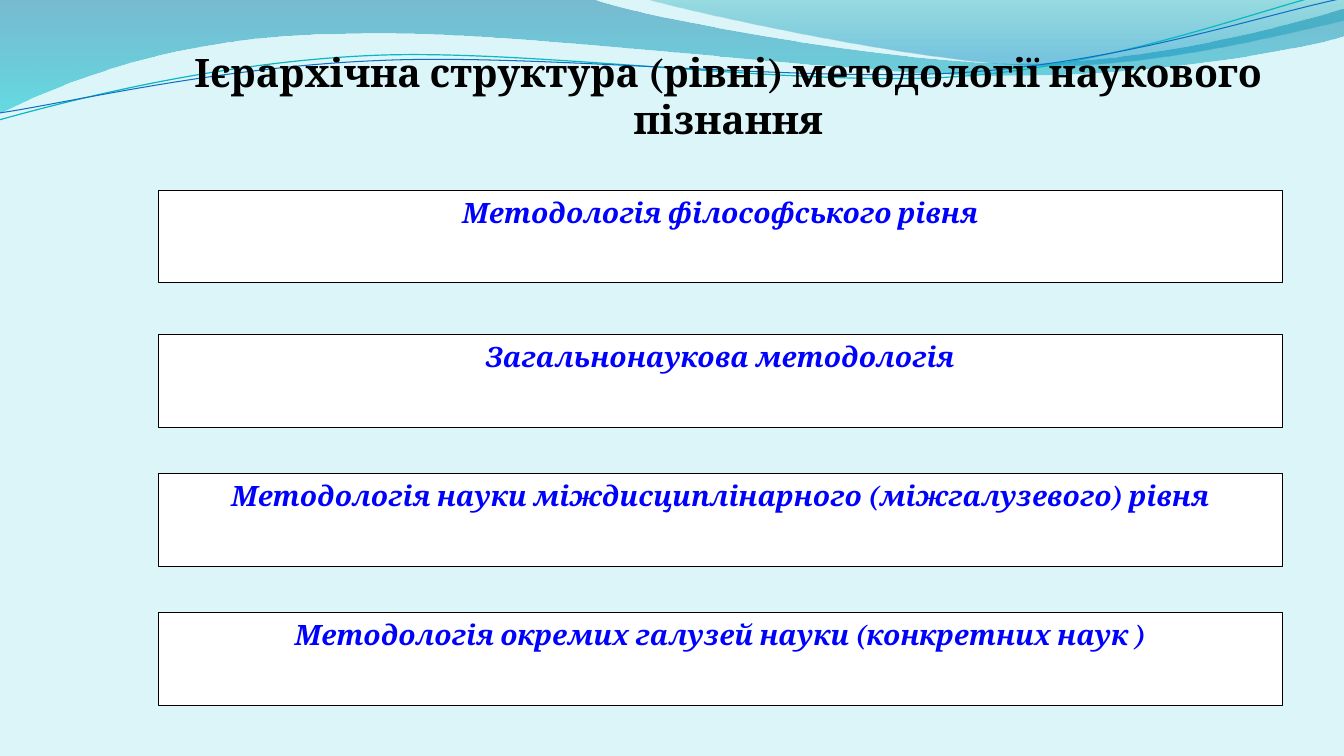
from pptx import Presentation
from pptx.dml.color import RGBColor
from pptx.enum.shapes import MSO_SHAPE
from pptx.enum.text import MSO_ANCHOR, PP_ALIGN
from pptx.oxml.ns import qn
from pptx.util import Cm, Pt
from lxml.etree import SubElement

FONT = "Cambria"
INCH = 2.54

# Wave outlines in inches: a start, then segments of one point (line)
# or three points (Bezier curve).
BAND = ((0, -0.01), [
    [(5.87, -0.01)],
    [(6.34, 0.17), (8.85, 0.63), (10.11, 0.63)],
    [(11.38, 0.63), (12.78, 0.26), (13.33, 0.09)],
    [(13.35, 0.36)],
    [(13.11, 0.44), (11.6, 0.76), (9.94, 0.75)],
    [(8.29, 0.75), (5.09, 0.28), (3.43, 0.34)],
    [(1.72, 0.35), (0.61, 0.83), (-0.01, 1.13)]])
CREST = ((6.39, -0.01), [
    [(6.79, 0.11), (9.09, 0.62), (10.25, 0.65)],
    [(11.41, 0.69), (12.82, 0.32), (13.33, 0.21)],
    [(13.33, 0)]])
TEAL = ((-0.01, 1.19), [
    [(0.64, 1.01), (2.11, 0.62), (3.69, 0.55)],
    [(5.27, 0.48), (7.9, 0.87), (9.5, 0.76)],
    [(11.1, 0.65), (12.52, 0.08), (13.31, -0.1)]])
BLUE = ((0, 1.12), [
    [(0.63, 1.03), (2.18, 0.66), (3.78, 0.6)],
    [(5.37, 0.53), (7.96, 0.82), (9.55, 0.72)],
    [(11.15, 0.62), (12.55, 0.14), (13.34, -0.02)]])

TITLE = "Ієрархічна структура (рівні) методології наукового пізнання"
LEVELS = [
    (0, "Методологія філософського рівня"),
    (3.64, "Загальнонаукова методологія"),
    (7.15, "Методологія науки міждисциплінарного (міжгалузевого) рівня"),
    (10.65, "Методологія окремих галузей науки (конкретних наук )"),
]


def color(text):
    return RGBColor.from_string(text)


def bend(shape, parts):
    """Turn each run of three line points into one Bezier curve."""
    lines = iter(list(shape._element.iter(qn("a:lnTo"))))
    for part in parts:
        group = [next(lines) for _ in part]
        if len(group) == 3:
            curve = group[0]
            curve.tag = qn("a:cubicBezTo")
            for line in group[1:]:
                curve.append(line[0])
                line.getparent().remove(line)


def trace(slide, left, top, wave, close):
    start, parts = wave
    pts = [start] + [pt for part in parts for pt in part]
    spots = [(Cm(left + x * INCH), Cm(top + y * INCH)) for x, y in pts]
    form = slide.shapes.build_freeform(*spots[0], scale=1.0)
    form.add_line_segments(spots[1:], close=close)
    shape = form.convert_to_shape()
    shape.shadow.inherit = False
    bend(shape, parts)
    return shape


def shade(shape, stops):
    """Downward gradient from (place, colour, opacity %) stops."""
    fill = shape.fill
    fill.gradient()
    fill.gradient_angle = 270
    nodes = shape._element.iter(qn("a:gs"))
    for stop, node, (place, tint, alpha) in zip(
            fill.gradient_stops, nodes, stops):
        stop.position = place
        stop.color.rgb = color(tint)
        SubElement(node[0], qn("a:alpha")).set("val", str(alpha * 1000))
    shape.line.fill.background()


def waves(slide, left, top):
    for wave, stops in [
        (BAND, [(0, "0074A1", 45), (1, "00C6CF", 55)]),
        (CREST, [(0, "00A1A9", 30), (0.8, "008BBF", 45)]),
    ]:
        shade(trace(slide, left, top, wave, True), stops)
    for wave, tint, width in [(TEAL, "0AB8BF", 0.85), (BLUE, "0F6FC6", 0.75)]:
        shape = trace(slide, left, top, wave, False)
        shape.fill.background()
        shape.line.color.rgb = color(tint)
        shape.line.width = Pt(width)


def write(shape, text, size, tint, slant=False):
    frame = shape.text_frame
    frame.word_wrap = True
    frame.vertical_anchor = MSO_ANCHOR.TOP
    para = frame.paragraphs[0]
    para.alignment = PP_ALIGN.CENTER
    run = para.add_run()
    run.text = text
    font = run.font
    font.name, font.size = FONT, Pt(size)
    font.bold, font.italic = True, slant
    font.color.rgb = color(tint)


def head(slide, left, top, width, height):
    title = slide.shapes.title
    title.left, title.top = Cm(left), Cm(top)
    title.width, title.height = Cm(width), Cm(height)
    write(title, TITLE, 28, "000000")
    # Bring the title in front of the waves.
    slide.shapes._spTree.append(title._element)


def levels(slide, left, top, width, height):
    for drop, text in LEVELS:
        box = slide.shapes.add_shape(
            MSO_SHAPE.RECTANGLE, Cm(left), Cm(top + drop), Cm(width), Cm(height))
        box.shadow.inherit = False
        box.fill.solid()
        box.fill.fore_color.rgb = color("FFFFFF")
        box.line.color.rgb = color("000000")
        box.line.width = Pt(0.75)
        write(box, text, 20, "0000FF", slant=True)


def main():
    deck = Presentation()
    deck.slide_width, deck.slide_height = Cm(33.87), Cm(19.05)
    slide = deck.slides.add_slide(deck.slide_layouts[5])
    back = slide.background.fill
    back.solid()
    back.fore_color.rgb = color("DBF5F9")
    waves(slide, 0, 0)
    head(slide, 3.99, 1.09, 28.73, 2.64)
    levels(slide, 3.99, 4.79, 28.32, 2.34)
    deck.save("out.pptx")


if __name__ == "__main__":
    main()
